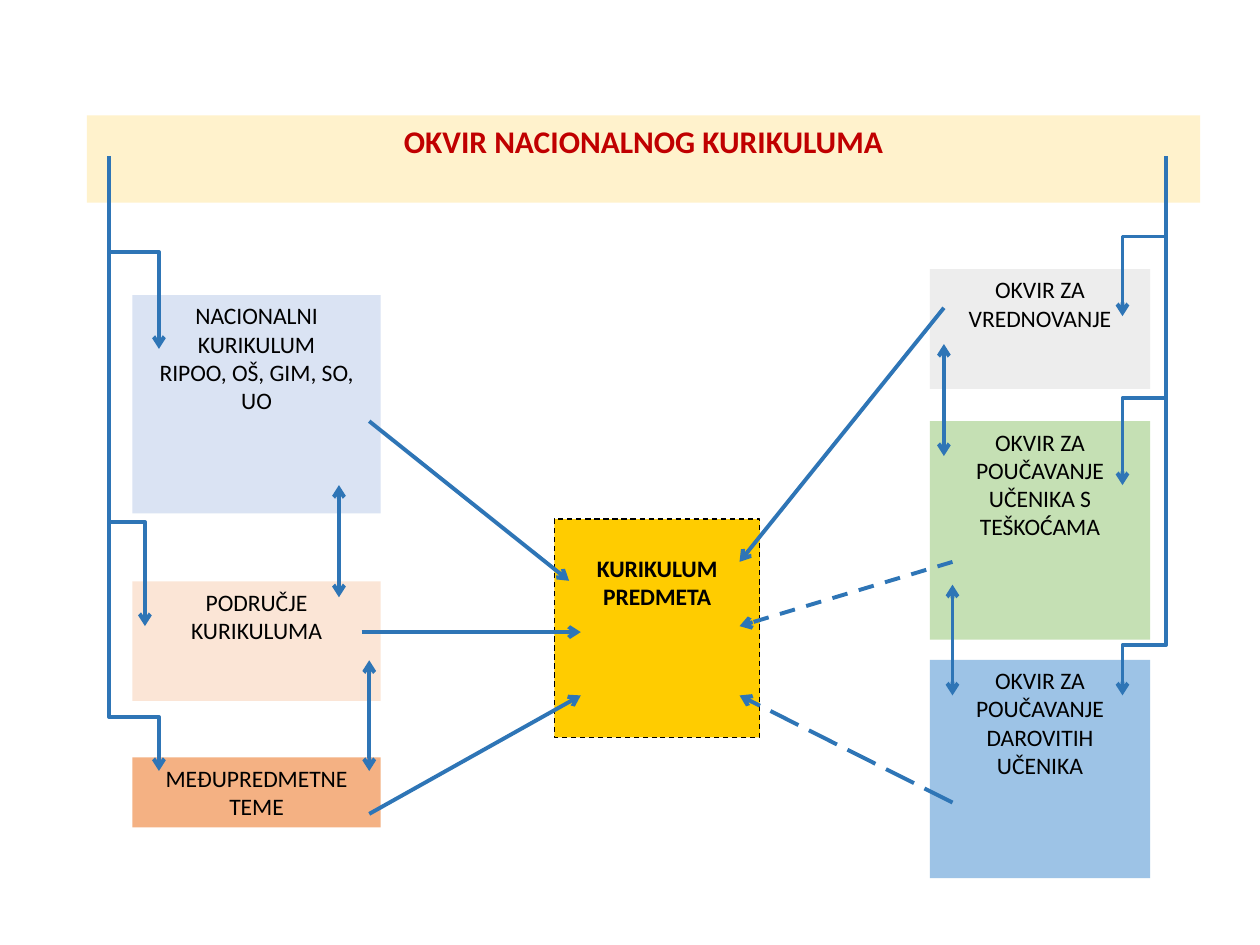
import pptx
import pptx.util
import pptx.dml.color
import pptx.enum.dml
import pptx.enum.shapes
import pptx.enum.text
import pptx.oxml.ns
from lxml import etree

Pt = pptx.util.Pt
qn = pptx.oxml.ns.qn
DASH = pptx.enum.dml.MSO_LINE_DASH_STYLE
KIND = pptx.enum.shapes.MSO_CONNECTOR
HUES = {
    "gold": "FFCC00", "cream": "FFF2CC", "peach": "FBE5D6", "orange": "F4B183",
    "gray": "EDEDED", "pale": "DAE3F3", "green": "C5E0B4", "sky": "9DC3E6",
    "line": "2E75B6", "black": "000000", "red": "C00000",
}


def color(name):
    """Return the named colour."""
    return pptx.dml.color.RGBColor.from_string(HUES[name])


def write(frame, text, size=13.5, hue="black", bold=False, font="Calibri", top=3.6):
    """Fill a text frame with centred paragraphs, one for each line of text."""
    frame.word_wrap = True
    frame.vertical_anchor = pptx.enum.text.MSO_ANCHOR.TOP
    frame.margin_top = Pt(top)
    for i, words in enumerate(text.split("\n")):
        para = frame.add_paragraph() if i else frame.paragraphs[0]
        para.alignment = pptx.enum.text.PP_ALIGN.CENTER
        run = para.add_run()
        run.text = words
        run.font.size = Pt(size)
        run.font.name = font
        run.font.bold = bold
        run.font.color.rgb = color(hue)


class Chart:
    """Hold the line style and the current slide of the curriculum chart."""

    def __init__(self, slide, hue="line", width=2.25):
        self.slide = slide
        self.hue = hue
        self.width = width

    def box(self, area, fill, text, dashed=False, **form):
        """Add a filled rectangle with text."""
        shape = self.slide.shapes.add_shape(
            pptx.enum.shapes.MSO_SHAPE.RECTANGLE, *map(Pt, area))
        shape.shadow.inherit = False
        shape.fill.solid()
        shape.fill.fore_color.rgb = color(fill)
        if dashed:
            shape.line.color.rgb = color("black")
            shape.line.width = Pt(0.75)
            shape.line.dash_style = DASH.DASH
        else:
            shape.line.fill.background()
        write(shape.text_frame, text, **form)

    def link(self, kind, ends, heads, dash=None):
        """Add a connector with the given arrowheads."""
        link = self.slide.shapes.add_connector(kind, *map(Pt, ends))
        link.line.color.rgb = color(self.hue)
        link.line.width = Pt(self.width)
        if dash:
            link.line.dash_style = dash
        props = link._element.spPr
        for head in heads:
            etree.SubElement(props.find(qn("a:ln")), qn("a:" + head), type="arrow")
        etree.SubElement(props, qn("a:effectLst"))
        return link

    def arrow(self, *ends, both=False, dash=None):
        """Add a straight arrow with one or two heads."""
        self.link(KIND.STRAIGHT, ends, ("headEnd", "tailEnd") if both else ("tailEnd",), dash)

    def elbow(self, x1, y1, x2, y2, bend):
        """Add an arrow that runs down, across at the bend, and down again."""
        wide, high = y2 - y1, abs(x2 - x1)
        left, top = (x1 + x2 - wide) / 2, (y1 + y2 - high) / 2
        sides = (left, left + wide)
        start, end = sides[::-1] if x2 > x1 else sides
        link = self.link(KIND.ELBOW, (start, top, end, top + high), ("tailEnd",))
        turn = 270 if x2 > x1 else 90
        props = link._element.spPr
        props.find(qn("a:xfrm")).set("rot", str(turn * 60000))
        part = round((bend - y1) / wide * 100000)
        etree.SubElement(props.find(qn("a:prstGeom")).find(qn("a:avLst")),
                         qn("a:gd"), name="adj1", fmla=f"val {part}")


def main():
    """Build and save the slide."""
    deck = pptx.Presentation()
    deck.slide_width, deck.slide_height = Pt(720), Pt(540)
    chart = Chart(deck.slides.add_slide(deck.slide_layouts[6]))

    chart.box((316.8, 296.6, 117.4, 124.8), "gold", "KURIKULUM\nPREDMETA",
              dashed=True, bold=True, top=20)
    chart.box((49.7, 66, 636.2, 49.8), "cream", "OKVIR NACIONALNOG KURIKULUMA",
              size=18, hue="red", bold=True)
    for top, high, fill, text in (
        (168.6, 124.8, "pale", "NACIONALNI KURIKULUM\nRIPOO, OŠ, GIM, SO, UO"),
        (332.2, 68.4, "peach", "PODRUČJE KURIKULUMA"),
        (432.8, 40, "orange", "MEĐUPREDMETNE\nTEME"),
    ):
        chart.box((75.6, top, 142, high), fill, text)
    for top, high, fill, text in (
        (153.8, 68.4, "gray", "OKVIR ZA VREDNOVANJE"),
        (240.7, 124.8, "green", "OKVIR ZA POUČAVANJE UČENIKA S TEŠKOĆAMA"),
        (377, 124.8, "sky", "OKVIR ZA POUČAVANJE DAROVITIH UČENIKA"),
    ):
        chart.box((531.4, top, 125.8, high), fill, text)

    for start, x, end, bend in (
        (89.3, 90.8, 199.4, 144), (118.1, 82.8, 357.8, 298.4), (277.2, 90.8, 440.6, 409.7),
    ):
        chart.elbow(62.2, start, x, end, bend)
    for start, end, bend in (
        (89.3, 180.7, 135.2), (135.2, 277.2, 227.5), (208.1, 397.4, 368.6),
    ):
        chart.elbow(666.3, start, 641.4, end, bend)

    for x, top, end in (
        (193.7, 277.2, 341.3), (211, 377.3, 440.6), (539.4, 196.6, 260.6), (544.3, 334.1, 397.4),
    ):
        chart.arrow(x, top, x, end, both=True)
    for ends, dash in (
        ((211, 240.7, 325.2, 331.9), None),
        ((206.6, 361.2, 331.9, 361.2), None),
        ((211, 465.1, 331.9, 397.4), None),
        ((539.4, 175.9, 422.6, 321.1), None),
        ((544.3, 321.1, 422.6, 357.8), DASH.DASH),
        ((544.3, 458.6, 422.6, 397.4), DASH.LONG_DASH),
    ):
        chart.arrow(*ends, dash=dash)
    deck.save("out.pptx")


if __name__ == "__main__":
    main()
